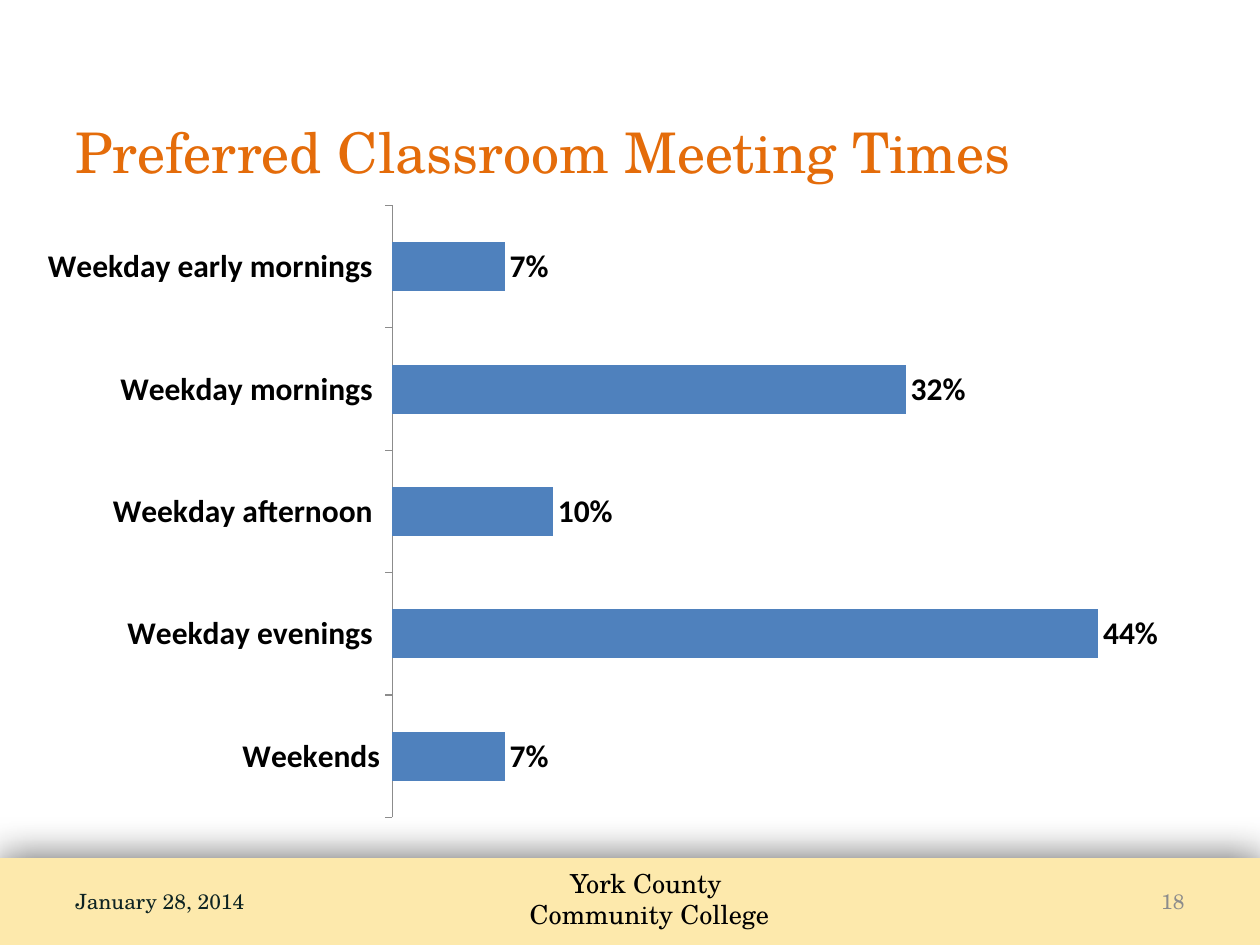
import pptx
import pptx.chart.data
import pptx.dml.color
import pptx.enum.chart
import pptx.enum.shapes
import pptx.enum.text
import pptx.oxml
import pptx.oxml.ns
import pptx.util

RGB = pptx.dml.color.RGBColor
ORANGE = RGB(0xE4, 0x6C, 0x0A)
CREAM = RGB(0xFD, 0xE9, 0xAC)
BLUE = RGB(0x4F, 0x81, 0xBD)
DARK = RGB(0x0D, 0x23, 0x22)
GRAY = RGB(0x8C, 0x8C, 0x8C)
BLACK = RGB(0, 0, 0)
SERIF, SANS = "TeX Gyre Schola", "Calibri"
ALIGN = pptx.enum.text.PP_ALIGN
ANCHOR = pptx.enum.text.MSO_ANCHOR
WIDE, HIGH = 10, 7.5
EDGE = 0.05 * WIDE
FOOT = 6.95

TIMES = {
    "Weekday early mornings ": 0.07,
    "Weekday mornings ": 0.32,
    "Weekday afternoon ": 0.10,
    "Weekday evenings ": 0.44,
    "Weekends": 0.07,
}


def inches(*sizes):
    return [pptx.util.Inches(size) for size in sizes]


def style(font, size, color, name=SERIF, bold=False):
    font.size = pptx.util.Pt(size)
    font.color.rgb = color
    font.name = name
    font.bold = bold


def write(shape, text, size=12, color=BLACK, align=ALIGN.LEFT, anchor=ANCHOR.MIDDLE):
    """Fill a shape with text, one paragraph for each line."""
    frame = shape.text_frame
    frame.word_wrap = True
    frame.vertical_anchor = anchor
    frame.text = text
    for para in frame.paragraphs:
        para.alignment = align
        style(para.font, size, color)


def add_text(slide, box, text, **format):
    write(slide.shapes.add_textbox(*inches(*box)), text, **format)


def add_title(slide, box, text, **format):
    title = slide.shapes.title
    title.left, title.top, title.width, title.height = inches(*box)
    write(title, text, **format)


def add_band(slide, box):
    """Draw the footer band with a soft shadow around it."""
    rect = pptx.enum.shapes.MSO_SHAPE.RECTANGLE
    band = slide.shapes.add_shape(rect, *inches(*box))
    band.shadow.inherit = False
    band.fill.solid()
    band.fill.fore_color.rgb = CREAM
    band.line.fill.background()
    effects = band.fill._xPr.find(pptx.oxml.ns.qn("a:effectLst"))
    effects.append(pptx.oxml.parse_xml(
        f'<a:outerShdw {pptx.oxml.ns.nsdecls("a")} dir="18000000" dist="0"'
        f' blurRad="{pptx.util.Pt(23.8)}" rotWithShape="0">'
        '<a:srgbClr val="000000"><a:alpha val="65000"/></a:srgbClr></a:outerShdw>'))


def set_plot(chart, **shares):
    """Fix the inner plot area, in shares of the chart's size."""
    parts = "".join(f'<c:{key} val="{share}"/>' for key, share in shares.items())
    area = chart._chartSpace.chart.plotArea
    for old in area.findall(pptx.oxml.ns.qn("c:layout")):
        area.remove(old)
    area.insert(0, pptx.oxml.parse_xml(
        f'<c:layout {pptx.oxml.ns.nsdecls("c")}><c:manualLayout>'
        '<c:layoutTarget val="inner"/><c:xMode val="edge"/><c:yMode val="edge"/>'
        f'{parts}</c:manualLayout></c:layout>'))


def add_bars(slide, box, values):
    kinds = pptx.enum.chart
    data = pptx.chart.data.CategoryChartData(number_format="0%")
    data.categories = list(values)
    data.add_series("Series 1", list(values.values()))
    chart = slide.shapes.add_chart(
        kinds.XL_CHART_TYPE.BAR_CLUSTERED, *inches(*box), data).chart
    chart.has_legend = False
    chart.has_title = False
    style(chart.font, 18, BLACK, SANS)

    names = chart.category_axis
    names.reverse_order = True
    names.major_tick_mark = kinds.XL_TICK_MARK.OUTSIDE
    names.format.line.color.rgb = GRAY
    names.format.line.width = pptx.util.Pt(0.75)
    style(names.tick_labels.font, 18, BLACK, SANS, bold=True)

    scale = chart.value_axis
    scale.minimum_scale, scale.maximum_scale = 0, 0.5
    scale.has_major_gridlines = False
    scale.visible = False

    plot = chart.plots[0]
    plot.gap_width = 150
    plot.vary_by_categories = False
    bars = plot.series[0]
    bars.format.fill.solid()
    bars.format.fill.fore_color.rgb = BLUE
    labels = bars.data_labels
    labels.show_value = True
    labels.number_format = "0%"
    labels.number_format_is_linked = False
    labels.position = kinds.XL_LABEL_POSITION.OUTSIDE_END
    style(labels.font, 18, BLACK, SANS, bold=True)
    set_plot(chart, x=0.31, y=0.02, w=0.67, h=0.96)


def main():
    deck = pptx.Presentation()
    deck.slide_width, deck.slide_height = inches(WIDE, HIGH)
    slide = deck.slides.add_slide(deck.slide_layouts[5])
    add_band(slide, (0, 6.81, WIDE, HIGH - 6.81))
    add_text(slide, (3.87, 6.83, 2.57, 0.61), "York County \nCommunity College",
             size=15, align=ALIGN.CENTER, anchor=ANCHOR.TOP)
    add_title(slide, (EDGE, 0.82, WIDE - 2 * EDGE, 0.76),
              "Preferred Classroom Meeting Times", size=32, color=ORANGE)
    add_text(slide, (EDGE, FOOT, 2.5, 0.4), "January 28, 2014", color=DARK)
    add_text(slide, (7.17, FOOT, 2.33, 0.4), "18", color=GRAY, align=ALIGN.RIGHT)
    add_bars(slide, (0.17, 1.53, 9.5, 5.06), TIMES)
    deck.save("out.pptx")


if __name__ == "__main__":
    main()
